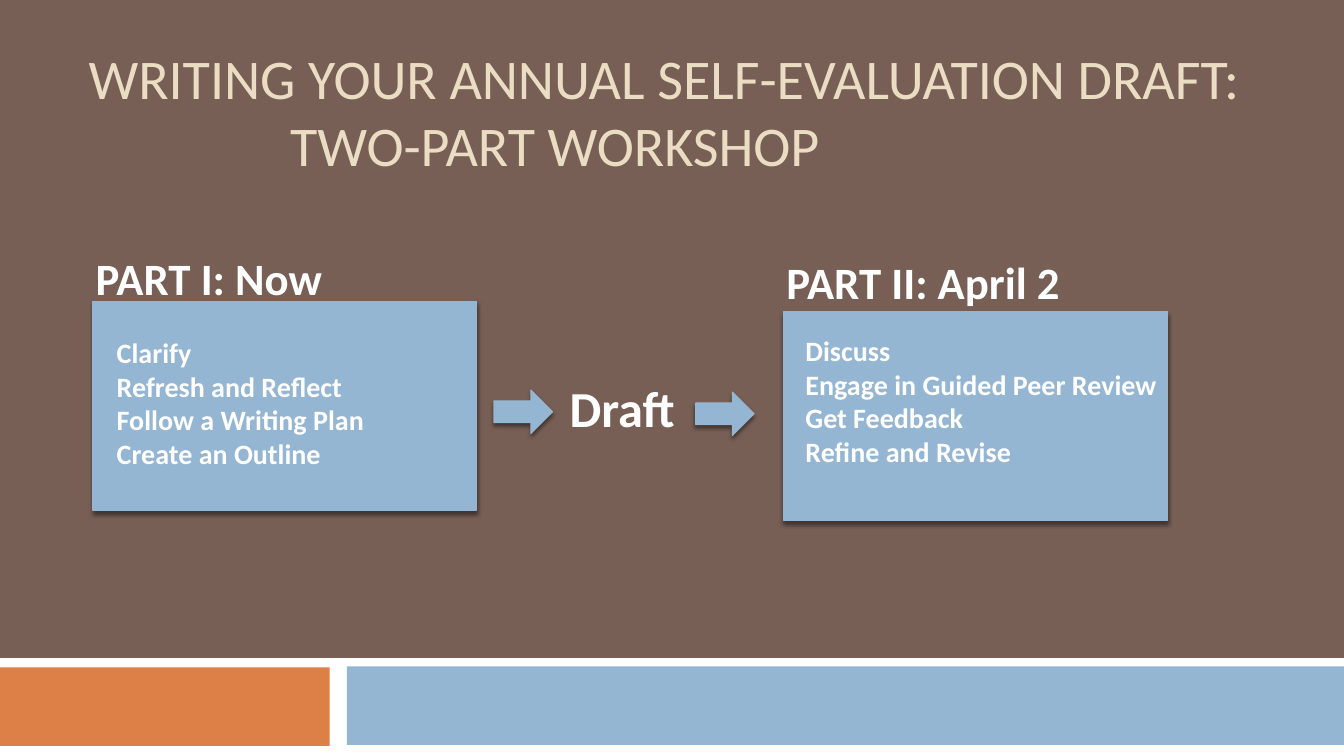
from lxml.etree import SubElement
from pptx import Presentation
from pptx.dml.color import RGBColor
from pptx.enum.shapes import MSO_SHAPE as Preset
from pptx.enum.text import MSO_ANCHOR as Anchor
from pptx.oxml.ns import qn
from pptx.util import Inches, Pt

BROWN, ORANGE, BLUE, WHITE, CREAM = "775F55", "DD8047", "94B6D2", "FFFFFF", "EBDDC3"


def color(value):
    """Turn a hex string into a colour."""
    return RGBColor.from_string(value)


def apply(target, formats):
    """Set each attribute named in a dict of format values."""
    for name, value in formats.items():
        setattr(target, name, value)


def add_bar(slide, box, fill):
    """Draw a plain filled rectangle without an outline."""
    bar = slide.shapes.add_shape(Preset.RECTANGLE, *map(Inches, box))
    bar.shadow.inherit = False
    bar.fill.solid()
    bar.fill.fore_color.rgb = color(fill)
    bar.line.fill.background()


def add_raised(slide, preset, box):
    """Draw a blue shape with a soft shadow below it."""
    raised = slide.shapes.add_shape(preset, *map(Inches, box))
    raised.shadow.inherit = False
    raised.fill.solid()
    raised.fill.fore_color.rgb = color(BLUE)
    raised.line.color.rgb = color(BLUE)
    raised.line.width = Pt(0.79)
    effects = raised._element.spPr.find(qn("a:effectLst"))
    shadow = SubElement(effects, qn("a:outerShdw"), blurRad=str(Pt(3)),
                        dist=str(Pt(2.4)), dir="5400000", rotWithShape="0")
    tint = SubElement(shadow, qn("a:srgbClr"), val="000000")
    SubElement(tint, qn("a:alpha"), val="45000")


def add_text(slide, box, lines, size, bold=True, ink=WHITE):
    """Write one paragraph per line and return the paragraphs."""
    frame = slide.shapes.add_textbox(*map(Inches, box)).text_frame
    apply(frame, {"word_wrap": True, "vertical_anchor": Anchor.TOP})
    frame.text = "\n".join(lines)
    for paragraph in frame.paragraphs:
        font = paragraph.runs[0].font
        apply(font, {"name": "Calibri", "size": Pt(size), "bold": bold})
        font.color.rgb = color(ink)
    return frame.paragraphs


def add_part(slide, panel, heading, heading_at, steps, steps_at):
    """Build one workshop part: panel, heading and list of steps."""
    add_raised(slide, Preset.RECTANGLE, (*panel, 3.81, 2.07))
    add_text(slide, (*heading_at, 3.88, 0.64), [heading], 32)
    add_text(slide, (*steps_at, 3.93, 1.75), steps, 20)


def main():
    """Build the workshop slide and save it."""
    deck = Presentation()
    apply(deck, {"slide_width": Inches(13.33), "slide_height": Inches(7.5)})
    slide = deck.slides.add_slide(deck.slide_layouts[6])
    slide.background.fill.solid()
    slide.background.fill.fore_color.rgb = color(BROWN)

    add_bar(slide, (0, 6.53, 13.33, 0.97), WHITE)
    add_bar(slide, (-0.01, 6.62, 3.28, 0.78), ORANGE)
    add_bar(slide, (3.44, 6.61, 9.89, 0.78), BLUE)

    title = ["WRITING YOUR ANNUAL SELF-EVALUATION DRAFT:", "TWO-PART WORKSHOP"]
    subtitle = add_text(slide, (0.78, 0.38, 12.5, 1.5), title, 40, False, CREAM)[1]
    subtitle._p.get_or_add_pPr().set("marL", str(Inches(2)))

    add_part(slide, (0.92, 2.99), "PART I: Now", (0.85, 2.44),
             ["Clarify", "Refresh and Reflect", "Follow a Writing Plan",
              "Create an Outline"], (1.06, 3.28))
    add_part(slide, (7.77, 3.09), "PART II: April 2", (7.7, 2.48),
             ["Discuss", "Engage in Guided Peer Review", "Get Feedback",
              "Refine and Revise"], (7.89, 3.26))

    add_text(slide, (5.55, 3.69, 2.22, 0.71), ["Draft"], 36)
    for arrow_at in ((4.9, 3.87), (6.9, 3.89)):
        add_raised(slide, Preset.RIGHT_ARROW, (*arrow_at, 0.58, 0.43))

    deck.save("out.pptx")


if __name__ == "__main__":
    main()
